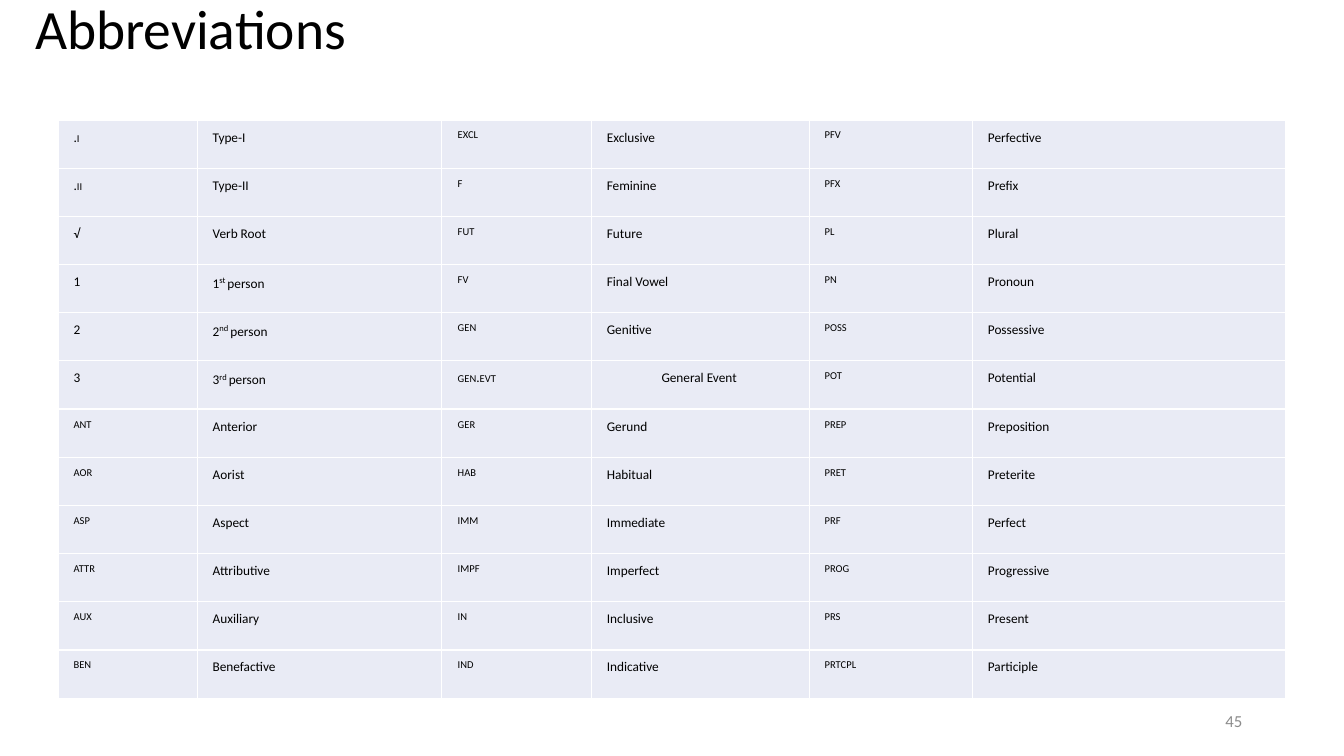
import itertools

import pptx
import pptx.dml.color
import pptx.enum.text
import pptx.oxml
import pptx.oxml.ns
import pptx.util

Inches = pptx.util.Inches
Pt = pptx.util.Pt
ALIGN = pptx.enum.text.PP_ALIGN
ANCHOR = pptx.enum.text.MSO_ANCHOR

# Each row holds three pairs of abbreviation and meaning; ^ encloses superscript
ABBREVIATIONS = """\
.I|Type-I|EXCL|Exclusive|PFV|Perfective
.II|Type-II|F|Feminine|PFX|Prefix
√|Verb Root|FUT|Future|PL|Plural
1|1^st ^person|FV|Final Vowel|PN|Pronoun
2|2^nd ^person|GEN|Genitive|POSS|Possessive
3|3^rd ^person|GEN.EVT|General Event |POT|Potential
ANT|Anterior|GER|Gerund|PREP|Preposition
AOR|Aorist|HAB|Habitual|PRET|Preterite
ASP|Aspect|IMM|Immediate|PRF|Perfect
ATTR|Attributive|IMPF|Imperfect|PROG|Progressive
AUX|Auxiliary|IN|Inclusive|PRS|Present
BEN|Benefactive|IND|Indicative|PRTCPL|Participle"""
COLUMN_WIDTHS = [1.38, 2.42, 1.49, 2.16, 1.62, 3.1]
CENTERED = "General Event "


def color(hex_string):
    return pptx.dml.color.RGBColor.from_string(hex_string)


class SlideBuilder:
    font_name = "Calibri"
    text_color = "000000"
    cell_fill = "E9EBF5"
    border_color = "FFFFFF"
    body_size, gloss_size, superscript_size = 9.5, 7.5, 10.5

    def __init__(self, slide):
        self.slide = slide

    def run(self, paragraph, text, size, hex_color=None, baseline=None):
        run = paragraph.add_run()
        run.text = text
        run.font.color.rgb = color(hex_color or self.text_color)
        for name, value in {"name": self.font_name, "size": Pt(size)}.items():
            setattr(run.font, name, value)
        if baseline:
            run.font._element.set("baseline", str(baseline * 1000))

    def text(self, text, box, size, hex_color=None, **paragraph_format):
        shape = self.slide.shapes.add_textbox(*map(Inches, box))
        frame = shape.text_frame
        frame.word_wrap = True
        frame.vertical_anchor = ANCHOR.MIDDLE
        paragraph = frame.paragraphs[0]
        for name, value in paragraph_format.items():
            setattr(paragraph, name, value)
        self.run(paragraph, text, size, hex_color)

    def borders(self, cell):
        properties = cell._tc.get_or_add_tcPr()
        namespace = pptx.oxml.ns.nsdecls("a")
        for side in "LRTB":
            properties.append(pptx.oxml.parse_xml(
                f'<a:ln{side} {namespace} w="{Pt(1)}"><a:solidFill>'
                f'<a:srgbClr val="{self.border_color}"/></a:solidFill></a:ln{side}>'))

    def cell(self, cell, text, column):
        self.borders(cell)
        cell.fill.solid()
        cell.fill.fore_color.rgb = color(self.cell_fill)
        for side in ("left", "right", "top", "bottom"):
            setattr(cell, f"margin_{side}", Inches(0.07))
        paragraph = cell.text_frame.paragraphs[0]
        paragraph.line_spacing = 1.15
        if text == CENTERED:
            paragraph.alignment = ALIGN.CENTER
        else:
            indent = Inches(0.09 if column == 2 else 0.08)
            paragraph._p.get_or_add_pPr().set("marL", str(indent))

        # Capitals of an abbreviation are set small
        if column % 2 == 0:
            for is_gloss, letters in itertools.groupby(text, str.isupper):
                size = self.gloss_size if is_gloss else self.body_size
                self.run(paragraph, "".join(letters), size)
            return
        for index, piece in enumerate(text.split("^")):
            if index % 2:
                self.run(paragraph, piece, self.superscript_size, baseline=30)
            else:
                self.run(paragraph, piece, self.body_size)

    def table(self, rows, box, column_widths):
        frame = self.slide.shapes.add_table(
            len(rows), len(column_widths), *map(Inches, box))
        table = frame.table
        for name in ("first_row", "horz_banding"):
            setattr(table, name, False)
        for column, width in zip(table.columns, column_widths):
            column.width = Inches(width)
        for row, texts in zip(table.rows, rows):
            row.height = Inches(box[3] / len(rows))
            for column, text in enumerate(texts):
                self.cell(row.cells[column], text, column)


def main():
    presentation = pptx.Presentation()
    presentation.slide_width = Inches(13.33)
    presentation.slide_height = Inches(7.5)
    slide = presentation.slides.add_slide(presentation.slide_layouts[6])
    builder = SlideBuilder(slide)

    # Title
    builder.text("Abbreviations", (0.25, 0, 12.17, 0.62), 39.6, line_spacing=0.9)

    # Table of abbreviations
    rows = [line.split("|") for line in ABBREVIATIONS.splitlines()]
    builder.table(rows, (0.58, 1.19, 12.17, 5.74), COLUMN_WIDTHS)

    # Slide number
    builder.text("45", (9.42, 6.95, 3, 0.4), 12, "8C8C8C", alignment=ALIGN.RIGHT)

    presentation.save("out.pptx")


if __name__ == "__main__":
    main()
